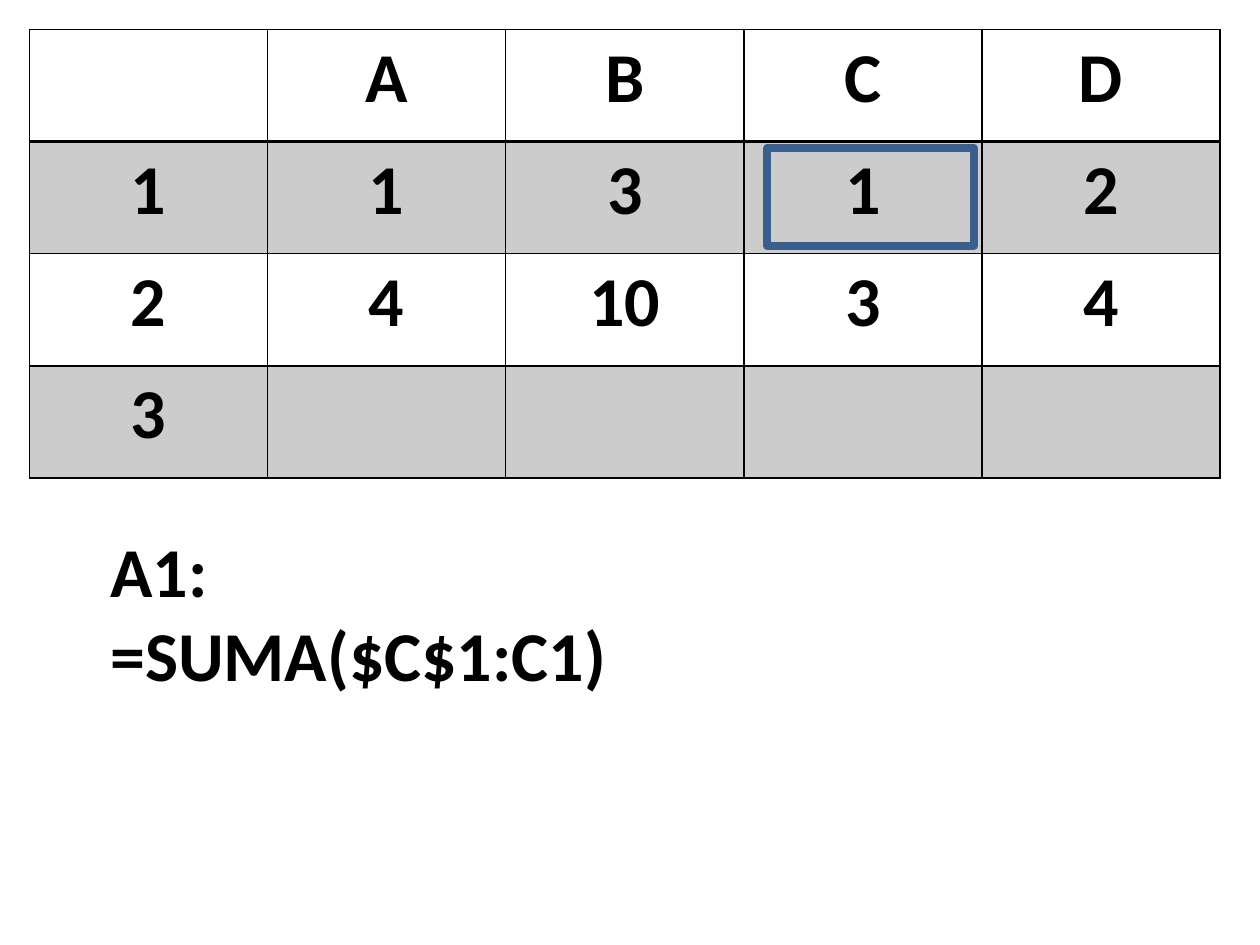
from lxml import etree
from pptx import Presentation
from pptx.dml.color import RGBColor
from pptx.enum.shapes import MSO_SHAPE
from pptx.enum.text import PP_ALIGN
from pptx.oxml.ns import qn
from pptx.util import Pt

RECTANGLE = MSO_SHAPE.RECTANGLE
LEFT, CENTER = PP_ALIGN.LEFT, PP_ALIGN.CENTER
BLANK_LAYOUT = 6

# Content
SHEET = [
    ["", "A", "B", "C", "D"],
    ["1", "1", "3", "1", "2"],
    ["2", "4", "10", "3", "4"],
    ["3", "", "", "", ""],
]
FORMULA = ["A1:", "=SUMA($C$1:C1)"]

# Format and layout, in points
FONT = {"name": "Calibri", "size": Pt(40), "bold": True}
BLACK, FRAME_BLUE = "000000", "3A5F8C"
BAND_OPACITY = 20
SHEET_LEFT, SHEET_TOP = 16.75, 16.75
COLUMN_WIDTH, ROW_HEIGHT = 136.1, 64.1
FORMULA_BOX = (56, 298, 585, 153)
FRAME_BOX = (438.5, 84.5, 118, 56)


def color(hex_value):
    return RGBColor.from_string(hex_value)


def points(box):
    return [Pt(value) for value in box]


def write(paragraph, text, alignment):
    paragraph.alignment = alignment
    run = paragraph.add_run()
    run.text = text
    for attribute, value in FONT.items():
        setattr(run.font, attribute, value)
    run.font.color.rgb = color(BLACK)


def shade(cell):
    """Fill a cell with translucent black."""
    cell.fill.solid()
    cell.fill.fore_color.rgb = color(BLACK)
    tint = cell._tc.tcPr.find(qn("a:solidFill"))[0]
    etree.SubElement(tint, qn("a:alpha"), val=str(BAND_OPACITY * 1000))


def draw_borders(cell, widths):
    """Border elements come before the fill, in the order L, R, T, B."""
    properties = cell._tc.get_or_add_tcPr()
    for index, (side, width) in enumerate(widths.items()):
        line = etree.Element(qn(f"a:ln{side}"), w=str(Pt(width)))
        fill = etree.SubElement(line, qn("a:solidFill"))
        etree.SubElement(fill, qn("a:srgbClr"), val=BLACK)
        properties.insert(index, line)


def add_sheet(slide):
    rows, columns = len(SHEET), len(SHEET[0])
    box = (SHEET_LEFT, SHEET_TOP, columns * COLUMN_WIDTH, rows * ROW_HEIGHT)
    sheet = slide.shapes.add_table(rows, columns, *points(box)).table
    for column in sheet.columns:
        column.width = Pt(COLUMN_WIDTH)
    for row_index, values in enumerate(SHEET):
        sheet.rows[row_index].height = Pt(ROW_HEIGHT)
        top = 2 if row_index == 1 else 1
        bottom = 2 if row_index == 0 else 1
        for column_index, value in enumerate(values):
            cell = sheet.cell(row_index, column_index)
            if row_index % 2:
                shade(cell)
            else:
                cell.fill.background()
            draw_borders(cell, {"L": 1, "R": 1, "T": top, "B": bottom})
            if value:
                write(cell.text_frame.paragraphs[0], value, CENTER)


def add_formula(slide):
    frame = slide.shapes.add_textbox(*points(FORMULA_BOX)).text_frame
    frame.word_wrap = True
    for index, line in enumerate(FORMULA):
        paragraph = frame.add_paragraph() if index else frame.paragraphs[0]
        write(paragraph, line, LEFT)


def add_cell_frame(slide):
    frame = slide.shapes.add_shape(RECTANGLE, *points(FRAME_BOX))
    frame.shadow.inherit = False
    frame.fill.background()
    frame.line.color.rgb = color(FRAME_BLUE)
    frame.line.width = Pt(4.5)


def main():
    deck = Presentation()
    deck.slide_width, deck.slide_height = Pt(720), Pt(540)
    slide = deck.slides.add_slide(deck.slide_layouts[BLANK_LAYOUT])
    add_sheet(slide)
    add_formula(slide)
    add_cell_frame(slide)
    deck.save("out.pptx")


if __name__ == "__main__":
    main()
